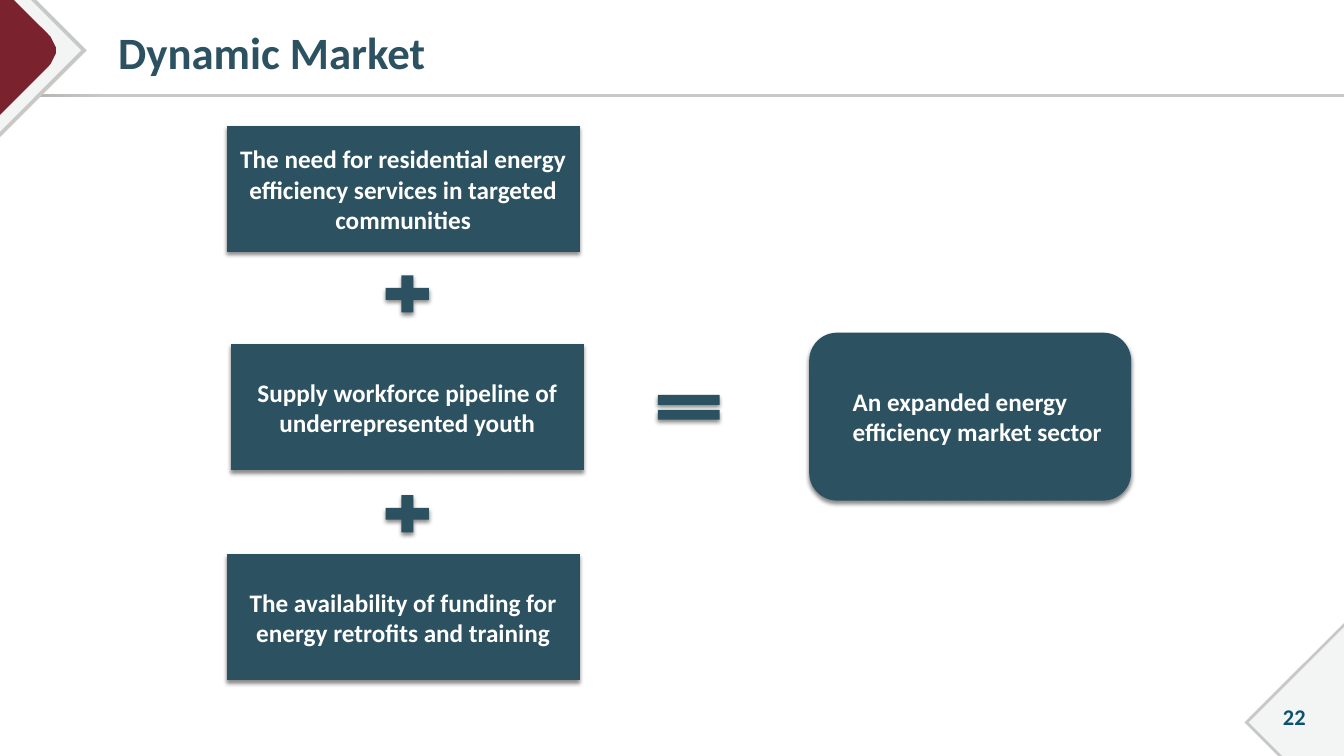
from lxml import etree
from pptx import Presentation
from pptx.dml.color import RGBColor
from pptx.enum.shapes import MSO_SHAPE
from pptx.enum.text import MSO_ANCHOR, PP_ALIGN
from pptx.oxml import parse_xml
from pptx.util import Pt

TEAL = RGBColor(0x2C, 0x52, 0x61)
NUMBER_BLUE = RGBColor(0x0B, 0x52, 0x6C)
WHITE = RGBColor(0xFF, 0xFF, 0xFF)
MAROON = RGBColor(0x7A, 0x23, 0x2F)
PALE = RGBColor(0xF3, 0xF4, 0xF4)
SILVER = RGBColor(0xC8, 0xC8, 0xC6)
DARK_SILVER = RGBColor(0xAB, 0xAB, 0xA8)

# Content, with lengths in points
WIDTH, HEIGHT = 960, 540
TITLE = "Dynamic Market"
PAGE_NUMBER = "22"
FACTORS = [  # left, top, text
    (162, 90, "The need for residential energy efficiency services in targeted communities"),
    (165, 246, "Supply workforce pipeline of underrepresented youth"),
    (162, 396, "The availability of funding for energy retrofits and training"),
]
FACTOR_SIZE = (252, 90)
OPERATORS = [  # preset, left, top, width, height
    (MSO_SHAPE.MATH_PLUS, 270, 192, 42, 36),
    (MSO_SHAPE.MATH_PLUS, 270, 349, 42, 36),
    (MSO_SHAPE.MATH_EQUAL, 462, 276, 60, 30),
]
RESULT = "An expanded energy efficiency market sector"
RESULT_BOX = (578, 237.6, 230, 120)


def rounded_tip(start, control_1, control_2, end, steps=12):
    """Points along a cubic curve."""
    points = []
    for step in range(steps + 1):
        t = step / steps
        weights = ((1 - t) ** 3, 3 * t * (1 - t) ** 2, 3 * t * t * (1 - t), t ** 3)
        corners = (start, control_1, control_2, end)
        points.append(tuple(sum(w * c[axis] for w, c in zip(weights, corners))
                            for axis in (0, 1)))
    return points


CORNERS = [  # outline, colour
    ([(0, 0), (26, 0), (62, 36), (0, 98)], SILVER),
    ([(0, 0), (22, 0), (58, 36), (0, 94)], PALE),
    ([(0, 0), (10, 0), *rounded_tip((34, 24), (42, 32), (42, 40), (34, 48)), (0, 82)], MAROON),
    ([(960, 445), (960, 540), (913, 540), (889, 516)], SILVER),
    ([(960, 448), (960, 540), (916, 540), (892, 516)], PALE),
]

SHADOW = (
    '<a:effectLst xmlns:a="http://schemas.openxmlformats.org/drawingml/2006/main">'
    '<a:outerShdw blurRad="38100" dist="25400" dir="5400000" rotWithShape="0">'
    '<a:srgbClr val="000000"><a:alpha val="45000"/></a:srgbClr>'
    '</a:outerShdw></a:effectLst>'
)


def write(holder, text, size=18, color=WHITE, align=PP_ALIGN.CENTER, left=7.2, spacing=None):
    frame = holder.text_frame
    frame.word_wrap = True
    frame.vertical_anchor = MSO_ANCHOR.MIDDLE
    frame.margin_left, frame.margin_right = Pt(left), Pt(7.2)
    frame.margin_top = frame.margin_bottom = Pt(3.6)
    paragraph = frame.paragraphs[0]
    paragraph.alignment = align
    paragraph.line_spacing = spacing
    run = paragraph.add_run()
    run.text = text
    font = run.font
    font.name, font.size, font.bold = "Calibri", Pt(size), True
    font.color.rgb = color


def place(holder, left, top, width, height):
    holder.left, holder.top = Pt(left), Pt(top)
    holder.width, holder.height = Pt(width), Pt(height)


def teal_block(preset, *box):
    block = slide.shapes.add_shape(preset, *map(Pt, box))
    block.fill.solid()
    block.fill.fore_color.rgb = TEAL
    block.line.fill.background()
    block._element.spPr.append(parse_xml(SHADOW))
    return block


deck = Presentation()
deck.slide_width, deck.slide_height = Pt(WIDTH), Pt(HEIGHT)
slide = deck.slides.add_slide(deck.slide_layouts[5])

# Rule under the title
rule = slide.shapes.add_shape(MSO_SHAPE.RECTANGLE, 0, Pt(67), Pt(WIDTH), Pt(2))
rule.shadow.inherit = False
rule.line.fill.background()
rule.fill.gradient()
rule.fill.gradient_angle = 0
for stop, color, position in zip(rule.fill.gradient_stops, (DARK_SILVER, SILVER), (0, 0.08)):
    stop.color.rgb = color
    stop.position = position

# Corner ornaments
for outline, color in CORNERS:
    builder = slide.shapes.build_freeform(*outline[0], scale=Pt(1))
    builder.add_line_segments(outline[1:], close=True)
    ornament = builder.convert_to_shape()
    ornament.shadow.inherit = False
    ornament.fill.solid()
    ornament.fill.fore_color.rgb = color
    ornament.line.fill.background()

# Title
title = slide.shapes.title
place(title, 70, 11, 648, 56)
write(title, TITLE, size=32, color=TEAL, align=PP_ALIGN.LEFT, left=14.4, spacing=0.9)

# Factors, operators and result
for left, top, text in FACTORS:
    write(teal_block(MSO_SHAPE.FLOWCHART_PROCESS, left, top, *FACTOR_SIZE), text)
for operator in OPERATORS:
    teal_block(*operator)
result = teal_block(MSO_SHAPE.FLOWCHART_ALTERNATE_PROCESS, *RESULT_BOX)
write(result, RESULT, align=PP_ALIGN.LEFT, left=25.2)

# Page number
page_number = slide.shapes.add_textbox(Pt(899), Pt(497.5), Pt(51), Pt(29))
write(page_number, PAGE_NUMBER, size=16, color=NUMBER_BLUE)

deck.save("out.pptx")
